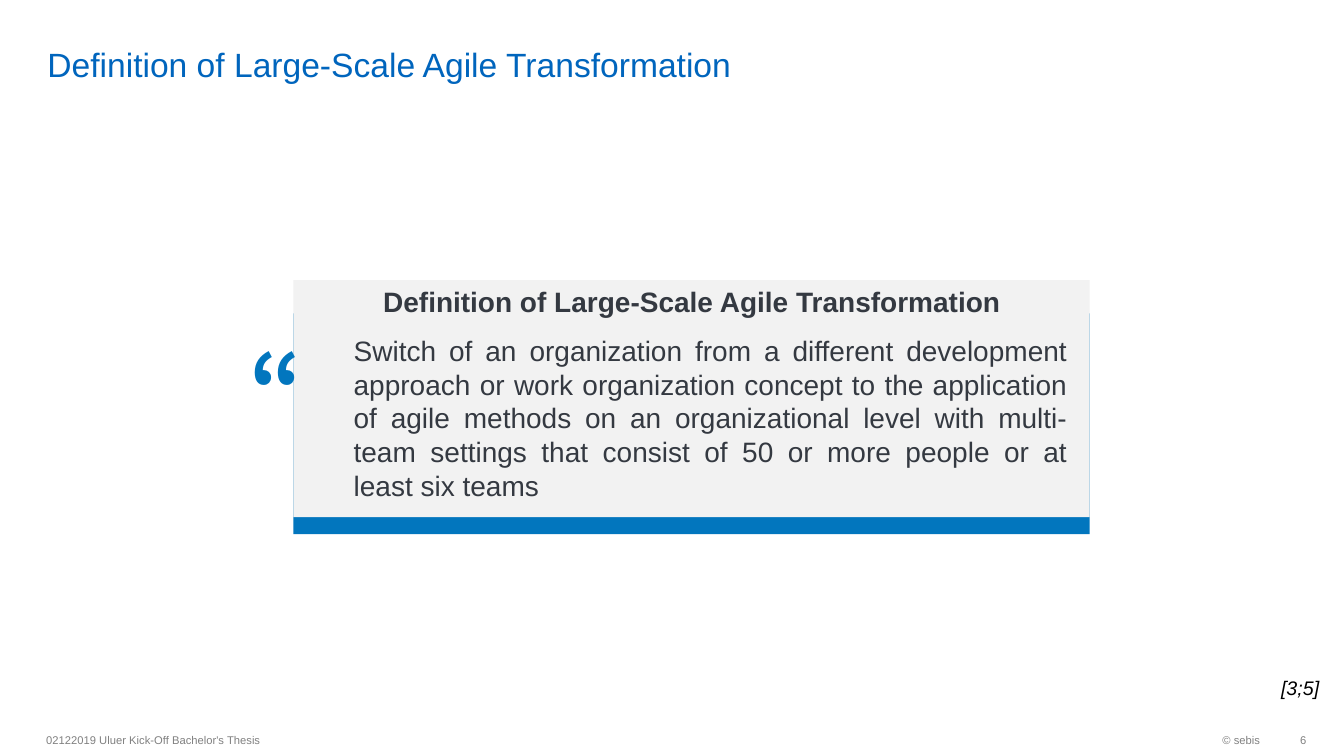
"""Build a slide that defines large-scale agile transformation."""
import dataclasses
import typing

import pptx
import pptx.dml.color
import pptx.enum.shapes
import pptx.enum.text
import pptx.util

ALIGN = pptx.enum.text.PP_ALIGN
ANCHOR = pptx.enum.text.MSO_ANCHOR
CELL = pptx.util.Inches(0.1)
COLS, ROWS = 133.33, 75
HUES = {
    "title": "0065BD",
    "blue": "0276BE",
    "panel": "F2F2F2",
    "ink": "343941",
    "grey": "808080",
    "black": "000000",
}
HEADING = "Definition of Large-Scale Agile Transformation"
BODY = (
    "Switch of an organization from a different development approach or work "
    "organization concept to the application of agile methods on an "
    "organizational level with multi-team settings that consist of 50 or more "
    "people or at least six teams"
)
FOOT_TOP, FOOT_TALL = 71.8, 3.2


@dataclasses.dataclass
class Area:
    col: float
    row: float
    wide: float
    tall: float

    def spans(self) -> list[int]:
        return [round(part * CELL) for part in dataclasses.astuple(self)]


@dataclasses.dataclass
class Panel:
    area: Area
    hue: str


@dataclasses.dataclass
class Label:
    text: str
    area: Area
    hue: str
    size: float
    face: str = "Arial"
    font: dict = dataclasses.field(default_factory=dict)
    frame: dict = dataclasses.field(default_factory=dict)
    para: dict = dataclasses.field(default_factory=dict)


MIDDLE = {"vertical_anchor": ANCHOR.MIDDLE}
RIGHT = {"alignment": ALIGN.RIGHT}

TITLE = Label(HEADING, Area(3.7, 0.5, 115.8, 7.9), "title", 24,
              frame={"vertical_anchor": ANCHOR.BOTTOM, "margin_top": 0, "margin_bottom": 0})
PANELS = [
    Panel(Area(29.1, 31.1, 79, 21.9), "blue"),
    Panel(Area(29.1, 27.8, 79, 23.5), "panel"),
]
LABELS = [
    Label(HEADING, Area(32.7, 27.7, 71.9, 6.2), "ink", 20,
          font={"bold": True}, para={"alignment": ALIGN.CENTER}),
    Label(BODY, Area(34.1, 22.1, 72.8, 38.7), "ink", 20,
          frame=MIDDLE, para={"alignment": ALIGN.JUSTIFY}),
    Label("“", Area(23.8, 14.3, 39.6, 43.7), "blue", 66, "Noto Sans CJK JP",
          font={"bold": True}, frame=MIDDLE, para={"line_spacing": 1.4}),
    Label("[3;5]", Area(126.1, 66.6, 7.2, 3.4), "black", 14, font={"italic": True}),
    Label("02122019 Uluer Kick-Off Bachelor's Thesis",
          Area(3.6, FOOT_TOP, 63, FOOT_TALL), "grey", 8, frame=MIDDLE),
    Label("© sebis", Area(102.6, FOOT_TOP, 23.4, FOOT_TALL), "grey", 8,
          frame=MIDDLE, para=RIGHT),
    Label("6", Area(126, FOOT_TOP, 3.6, FOOT_TALL), "grey", 8,
          frame={**MIDDLE, "margin_right": 0}, para=RIGHT),
]


def tint(name: str) -> pptx.dml.color.RGBColor:
    return pptx.dml.color.RGBColor.from_string(HUES[name])


def style(target: typing.Any, values: dict) -> None:
    for key, value in values.items():
        setattr(target, key, value)


def place(shape: typing.Any, area: Area) -> None:
    style(shape, dict(zip(("left", "top", "width", "height"), area.spans())))


def write(shape: typing.Any, label: Label) -> None:
    frame = shape.text_frame
    frame.text = label.text
    style(frame, {"word_wrap": True, "auto_size": pptx.enum.text.MSO_AUTO_SIZE.NONE,
                  **label.frame})
    para = frame.paragraphs[0]
    style(para, {"alignment": ALIGN.LEFT, **label.para})
    font = para.runs[0].font
    style(font, {"name": label.face, "size": pptx.util.Pt(label.size), **label.font})
    font.color.rgb = tint(label.hue)


def draw(slide: typing.Any, panel: Panel) -> None:
    kind = pptx.enum.shapes.MSO_SHAPE.RECTANGLE
    shape = slide.shapes.add_shape(kind, *panel.area.spans())
    shape.shadow.inherit = False
    shape.fill.solid()
    shape.fill.fore_color.rgb = tint(panel.hue)
    shape.line.fill.background()


def main() -> None:
    deck = pptx.Presentation()
    style(deck, {"slide_width": round(COLS * CELL), "slide_height": ROWS * CELL})
    slide = deck.slides.add_slide(deck.slide_layouts.get_by_name("Title Only"))
    place(slide.shapes.title, TITLE.area)
    write(slide.shapes.title, TITLE)
    for panel in PANELS:
        draw(slide, panel)
    for label in LABELS:
        write(slide.shapes.add_textbox(*label.area.spans()), label)
    deck.save("out.pptx")


if __name__ == "__main__":
    main()
